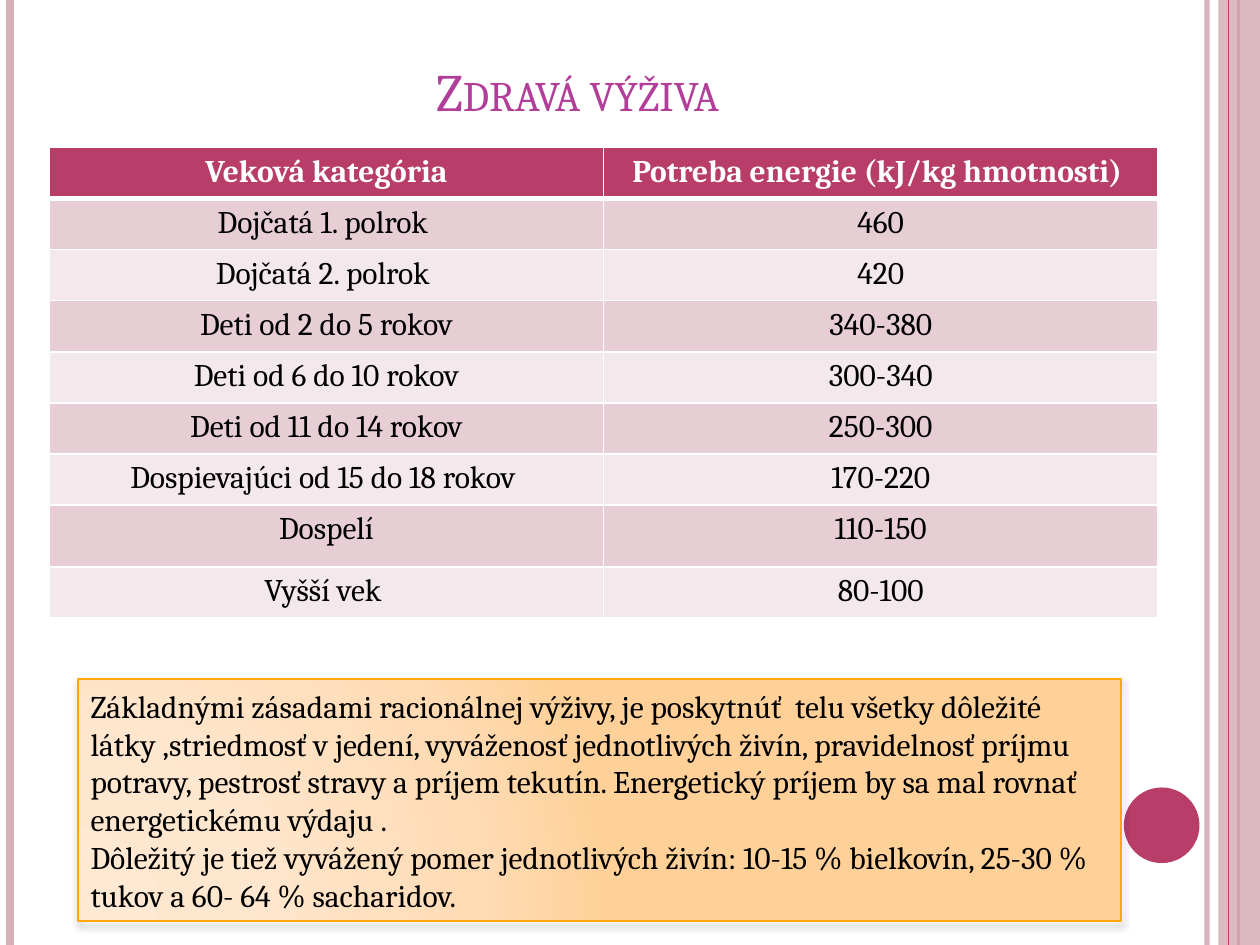
from pptx import Presentation
from pptx.dml.color import RGBColor
from pptx.enum.shapes import MSO_CONNECTOR as CONNECTOR, MSO_SHAPE as SHAPE
from pptx.enum.text import MSO_ANCHOR as ANCHOR, PP_ALIGN as ALIGN
from pptx.oxml import parse_xml
from pptx.oxml.ns import nsdecls
from pptx.util import Inches, Pt

FONT = "Cambria"
ROSE, PALE_ROSE, WHITE, BLACK = "B83D68", "D8AFB9", "FFFFFF", "000000"
BANDS = ("E6CED4", "F3E8EB")
SLIDE_HEIGHT = 7.5

ROWS = [
    ("Veková kategória", "Potreba energie (kJ/kg hmotnosti) "),
    ("Dojčatá 1. polrok ", "460"),
    ("Dojčatá 2. polrok ", "420"),
    ("Deti od 2 do 5 rokov", "340-380"),
    ("Deti od 6 do 10 rokov", "300-340"),
    ("Deti od 11 do 14 rokov", "250-300"),
    ("Dospievajúci od 15 do 18 rokov ", "170-220"),
    ("Dospelí", "110-150"),
    ("Vyšší vek ", "80-100"),
]
ADVICE = [
    "Základnými zásadami racionálnej výživy, je poskytnúť  telu všetky dôležité "
    "látky ,striedmosť v jedení, vyváženosť jednotlivých živín, pravidelnosť príjmu "
    "potravy, pestrosť stravy a príjem tekutín. Energetický príjem by sa mal rovnať "
    "energetickému výdaju .",
    "Dôležitý je tiež vyvážený pomer jednotlivých živín: 10-15 % bielkovín, 25-30 % "
    "tukov a 60- 64 % sacharidov.",
]


def color(value):
    return RGBColor.from_string(value)


def xml(markup):
    """Parse one element whose tag opens with the a: prefix."""
    tag_end = min(markup.index(mark) for mark in " />" if mark in markup)
    return parse_xml(markup[:tag_end] + " " + nsdecls("a") + markup[tag_end:])


def set_alpha(fill_parent, percent):
    for item in fill_parent.iter("{*}srgbClr"):
        item.append(xml(f'<a:alpha val="{percent * 1000}"/>'))


class SlideBuilder:
    def __init__(self, slide):
        self.slide = slide

    def format_text(self, text_frame, size, text_color, align, bold=False):
        for paragraph in text_frame.paragraphs:
            paragraph.alignment = align
            for run in paragraph.runs:
                run.font.name = FONT
                run.font.size = Pt(size)
                run.font.bold = bold
                run.font.color.rgb = color(text_color)

    def title(self, text, left, top, width, height):
        title = self.slide.shapes.title
        title.left, title.top = Inches(left), Inches(top)
        title.width, title.height = Inches(width), Inches(height)
        frame = title.text_frame
        frame.text = text
        frame.vertical_anchor = ANCHOR.BOTTOM
        self.format_text(frame, 30, "B13F9A", ALIGN.CENTER)
        frame.paragraphs[0].runs[0].font._element.set("cap", "small")

    def vertical_line(self, x, line_color, width, alpha=100):
        line = self.slide.shapes.add_connector(
            CONNECTOR.STRAIGHT, Inches(x), 0, Inches(x), Inches(SLIDE_HEIGHT))
        line.line.color.rgb = color(line_color)
        line.line.width = Pt(width)
        properties = line._element.spPr
        if alpha < 100:
            set_alpha(properties, alpha)
        properties.append(xml("<a:effectLst/>"))

    def shape(self, kind, left, top, width, height, fill=None, alpha=100):
        shape = self.slide.shapes.add_shape(
            kind, Inches(left), Inches(top), Inches(width), Inches(height))
        shape.shadow.inherit = False
        shape.line.fill.background()
        if fill:
            shape.fill.solid()
            shape.fill.fore_color.rgb = color(fill)
        if alpha < 100:
            set_alpha(shape._element.spPr, alpha)
        return shape

    def advice_box(self, paragraphs, left, top, width, height):
        box = self.shape(SHAPE.RECTANGLE, left, top, width, height)
        box.line.color.rgb = color("FEA808")
        box.line.width = Pt(1)
        # Radial gradient, placed right after the geometry
        stops = [(0, "FFE9D3"), (30, "FFE7CF"), (75, "FFDBB4"), (100, "FFD098")]
        stop_list = "".join(
            f'<a:gs pos="{position * 1000}"><a:srgbClr val="{value}"/></a:gs>'
            for position, value in stops)
        properties = box._element.spPr
        properties.insert(2, xml(
            f'<a:gradFill><a:gsLst>{stop_list}</a:gsLst><a:path path="circle">'
            '<a:fillToRect l="5000" t="100000" r="120000" b="10000"/>'
            '</a:path></a:gradFill>'))
        # Soft shadow below
        properties.find("{*}effectLst").append(xml(
            f'<a:outerShdw blurRad="{Pt(4)}" dist="{Pt(2)}" dir="5400000" '
            'rotWithShape="0"><a:srgbClr val="000000"><a:alpha val="40000"/>'
            '</a:srgbClr></a:outerShdw>'))
        frame = box.text_frame
        frame.word_wrap = True
        frame.text = "\n".join(paragraphs)
        self.format_text(frame, 18, BLACK, ALIGN.LEFT)

    def cell_borders(self, cell, bottom, top):
        properties = cell._tc.get_or_add_tcPr()
        for side, width in (("L", 1), ("R", 1), ("T", top), ("B", bottom)):
            properties.append(xml(
                f'<a:ln{side} w="{Pt(width)}"><a:solidFill>'
                f'<a:srgbClr val="{WHITE}"/></a:solidFill></a:ln{side}>'))

    def table(self, rows, left, top, column_width, row_height):
        columns = len(rows[0])
        table = self.slide.shapes.add_table(
            len(rows), columns, Inches(left), Inches(top),
            Inches(column_width * columns), row_height * len(rows)).table
        for column in table.columns:
            column.width = Inches(column_width)
        for index, values in enumerate(rows):
            header = index == 0
            fill = ROSE if header else BANDS[(index - 1) % 2]
            for cell, value in zip(table.rows[index].cells, values):
                self.cell_borders(cell, bottom=3 if header else 1,
                                  top=3 if index == 1 else 1)
                cell.fill.solid()
                cell.fill.fore_color.rgb = color(fill)
                cell.text_frame.text = value
                self.format_text(cell.text_frame, 18, WHITE if header else BLACK,
                                 ALIGN.CENTER, bold=header)
        return table


def main():
    presentation = Presentation()
    presentation.slide_width = Inches(10)
    presentation.slide_height = Inches(SLIDE_HEIGHT)
    slide = presentation.slides.add_slide(presentation.slide_layouts[5])
    builder = SlideBuilder(slide)

    # Side decoration
    builder.vertical_line(9.58, PALE_ROSE, 3, alpha=93)
    builder.vertical_line(0.08, PALE_ROSE, 4.5)
    builder.vertical_line(9.83, ROSE, 1.5)
    builder.shape(SHAPE.RECTANGLE, 9.67, 0, 0.33, SLIDE_HEIGHT, PALE_ROSE, alpha=87)
    builder.vertical_line(9.75, ROSE, 0.75)
    builder.shape(SHAPE.OVAL, 8.92, 6.25, 0.6, 0.6, ROSE)

    # Title
    builder.title("Zdravá výživa", 0.5, 0.3, 8.17, 0.72)

    # Energy needs by age, with a taller row for adults
    table = builder.table(ROWS, 0.39, 1.17, 4.4, Pt(29.2))
    table.rows[7].height = Inches(0.49)

    # Advice
    builder.advice_box(ADVICE, 0.62, 5.39, 8.28, 1.92)

    presentation.save("out.pptx")


if __name__ == "__main__":
    main()
